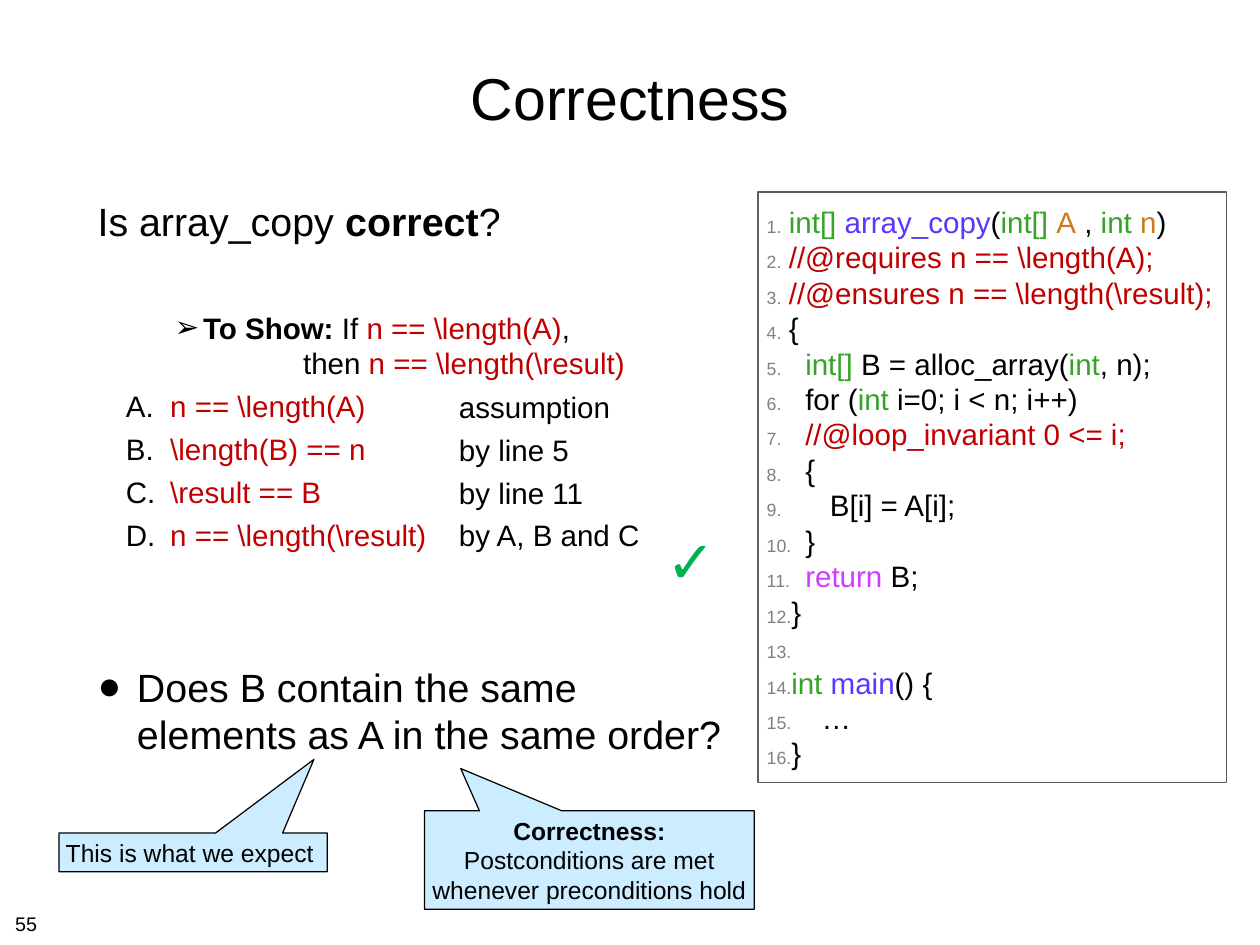
from lxml import etree
from pptx import Presentation
from pptx.dml.color import RGBColor
from pptx.enum import shapes, text
from pptx.oxml.ns import qn
from pptx.util import Pt

COLORS = {
    "black": "000000", "spec": "C00000", "type": "34A327", "name": "5E34FF",
    "param": "CD7923", "keyword": "D03BFF", "number": "808080",
    "frame": "5E5E5E", "callout": "CCECFF", "check": "00B050",
}
SPACE_WIDTH = 6.67  # one blank of 24 pt Arial
MIDDLE = text.MSO_ANCHOR.MIDDLE
CENTER = text.PP_ALIGN.CENTER

# Each line: depth in blanks, then its coloured pieces
CODE = [
    (0, [("int[] ", "type"), ("array_copy", "name"), ("(", "black"), ("int[] ", "type"),
         ("A", "param"), (" , ", "black"), ("int ", "type"), ("n", "param"), (")", "black")]),
    (0, [("//@requires n == \\length(A);", "spec")]),
    (0, [("//@ensures n == \\length(\\result);", "spec")]),
    (0, [("{", "black")]),
    (2, [("int[]", "type"), (" B = alloc_array(", "black"), ("int", "type"), (", n);", "black")]),
    (2, [("for (", "black"), ("int ", "type"), ("i=0; i < n; i++)", "black")]),
    (2, [("//@loop_invariant 0 <= i;", "spec")]),
    (2, [("{", "black")]),
    (5, [("B[i] = A[i];", "black")]),
    (2, [("}", "black")]),
    (2, [("return", "keyword"), (" B;", "black")]),
    (0, [("}", "black")]),
    (0, [(" ", "type")]),
    (0, [("int ", "type"), ("main", "name"), ("() {", "black")]),
    (4, [("…", "black")]),
    (0, [("}", "black")]),
]

PROOF = [
    ("n == \\length(A)", "assumption"),
    ("\\length(B) == n", "by line 5"),
    ("\\result == B", "by line 11"),
    ("n == \\length(\\result)", "by A, B and C"),
]


def rgb(color):
    return RGBColor.from_string(COLORS[color])


def set_frame(frame, inset, anchor=text.MSO_ANCHOR.TOP, wrap=True):
    frame.word_wrap = wrap
    frame.vertical_anchor = anchor
    frame.margin_left = frame.margin_right = Pt(inset)
    frame.margin_top = frame.margin_bottom = Pt(inset)


def set_bullet(paragraph, kind, value, color="black", percent=100):
    """Give the paragraph a sign (kind buChar) or a running number (kind buAutoNum)."""
    properties = paragraph._p.get_or_add_pPr()
    bullet_color = etree.SubElement(properties, qn("a:buClr"))
    etree.SubElement(bullet_color, qn("a:srgbClr"), val=COLORS[color])
    etree.SubElement(properties, qn("a:buSzPct"), val=str(percent * 1000))
    etree.SubElement(properties, qn("a:buFont"), typeface="Arial")
    key = "char" if kind == "buChar" else "type"
    etree.SubElement(properties, qn(f"a:{kind}"), {key: value})


def write(frame, pieces, size, align=None, before=0, left=0, hang=0, bullet=None):
    """Add a paragraph made of (words, color[, bold]) pieces."""
    paragraph = frame.paragraphs[0]
    if paragraph.runs:
        paragraph = frame.add_paragraph()
    properties = paragraph._p.get_or_add_pPr()
    properties.set("marL", str(int(Pt(left))))
    properties.set("indent", str(-int(Pt(hang))))
    if bullet:
        set_bullet(paragraph, *bullet)
    paragraph.font.name = "Arial"
    paragraph.font.size = Pt(size)
    paragraph.space_before = Pt(before)
    paragraph.alignment = align
    for words, color, *bold in pieces:
        run = paragraph.add_run()
        run.text = words
        run.font.color.rgb = rgb(color)
        if bold:
            run.font.bold = True


def add_text_area(slide, left, top, width, height, inset=4.3, **options):
    area = slide.shapes.add_textbox(Pt(left), Pt(top), Pt(width), Pt(height))
    set_frame(area.text_frame, inset, **options)
    return area.text_frame


def add_panel(slide, preset, box, inset, line, fill=None):
    panel = slide.shapes.add_shape(preset, *map(Pt, box))
    panel.shadow.inherit = False
    panel.line.color.rgb = rgb(line)
    panel.line.width = Pt(1)
    if fill:
        panel.fill.solid()
        panel.fill.fore_color.rgb = rgb(fill)
    else:
        panel.fill.background()
    set_frame(panel.text_frame, inset, MIDDLE)
    return panel


def add_callout(slide, box, tip, lines):
    callout = add_panel(slide, shapes.MSO_SHAPE.RECTANGULAR_CALLOUT, box, 3.6, "black", "callout")
    callout.adjustments[0], callout.adjustments[1] = tip
    for line in lines:
        write(callout.text_frame, [line], 20, CENTER)


def add_argument(slide):
    argument = add_text_area(slide, 75, 156, 527, 543)
    write(argument, [("Is array_copy ", "black"), ("correct", "black", True), ("?", "black")],
          32, before=8)
    write(argument, [("To Show: ", "black", True), ("If", "black"),
                     (" n == \\length(A)", "spec"), (",", "black")],
          24, before=53, left=85.7, hang=23, bullet=("buChar", "➢"))
    write(argument, [("then", "black"), (" n == \\length(\\result)", "spec")], 24, left=167)
    reasons = add_text_area(slide, 373, 316, 170, 134, inset=0)
    for index, (claim, reason) in enumerate(PROOF):
        write(argument, [(claim, "spec")], 24, before=6, left=59, hang=36,
              bullet=("buAutoNum", "alphaUcPeriod"))
        write(reasons, [(reason, "black")], 24, before=6 if index else 0)
    write(argument, [("Does B contain the same elements as A in the same order?", "black")],
          32, before=90, left=32, hang=32, bullet=("buChar", "●"))


def add_code(slide):
    listing = add_panel(slide, shapes.MSO_SHAPE.RECTANGLE, (616, 156, 381, 480), 7.2, "frame")
    listing.text_frame.margin_right = Pt(2)
    for depth, pieces in CODE:
        left = 18 + depth * SPACE_WIDTH
        write(listing.text_frame, pieces, 24, text.PP_ALIGN.LEFT, left=left, hang=left,
              bullet=("buAutoNum", "arabicPeriod", "number", 60))


def main():
    deck = Presentation()
    deck.slide_width, deck.slide_height = Pt(1024), Pt(768)
    slide = deck.slides.add_slide(deck.slide_layouts[6])

    title = add_text_area(slide, 75, 20, 874, 118, anchor=MIDDLE)
    write(title, [("Correctness", "black")], 48, CENTER)
    add_argument(slide)
    add_code(slide)
    add_callout(slide, (48, 677, 218, 31.5), (0.45, -2.4),
                [("This is what we expect ", "black")])
    add_callout(slide, (345, 659, 268, 80), (-0.39, -0.93),
                [("Correctness:", "black", True), ("Postconditions are met", "black"),
                 ("whenever preconditions hold", "black")])
    check = add_text_area(slide, 536, 422, 52, 65, wrap=False)
    write(check, [("✓", "check", True)], 48, CENTER)
    page_number = add_text_area(slide, 8, 736.5, 27, 25, wrap=False)
    write(page_number, [("55", "black")], 16)

    deck.save("out.pptx")


if __name__ == "__main__":
    main()
